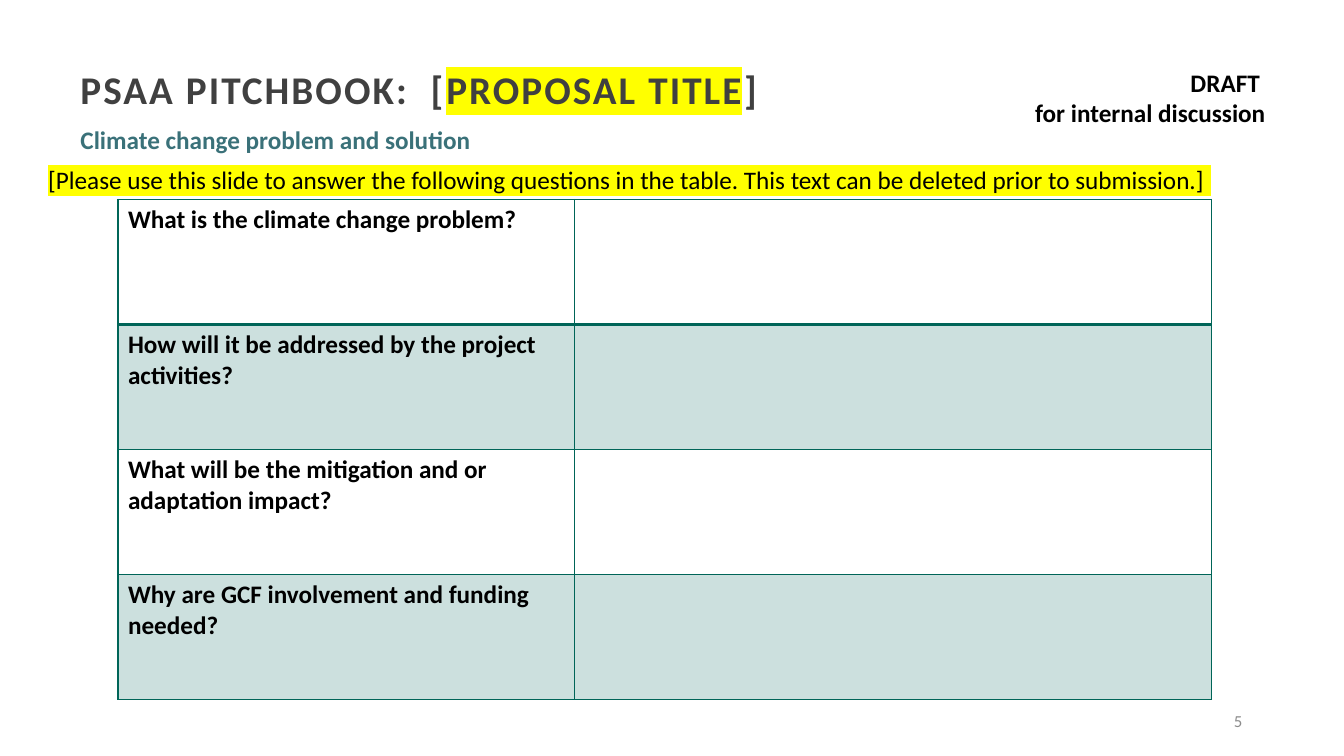
from lxml import etree
from pptx import Presentation
from pptx.dml.color import RGBColor
from pptx.enum import shapes, text
from pptx.oxml import ns
from pptx.util import Inches, Pt

BLACK = RGBColor(0x00, 0x00, 0x00)
WHITE = RGBColor(0xFF, 0xFF, 0xFF)
DARK_GREY = RGBColor(0x40, 0x40, 0x40)
GREY = RGBColor(0x8C, 0x8C, 0x8C)
TEAL = RGBColor(0x3A, 0x71, 0x79)
GREEN = RGBColor(0x00, 0x65, 0x58)
PALE_GREEN = RGBColor(0xCC, 0xE0, 0xDE)
YELLOW = RGBColor(0xFF, 0xFF, 0x00)

# A paragraph is a list of (text, highlight) runs.
DRAFT_NOTE = [[("DRAFT ", None)], [("for internal discussion", None)]]
TITLE = [[("PSAA PITCHBOOK:  [", None), ("PROPOSAL TITLE", YELLOW), ("]", None)]]
SUBTITLE = [[("Climate change problem and solution", None)]]
INSTRUCTION = [[("[Please use this slide to answer the following questions in the table. "
                 "This text can be deleted prior to submission.] ", YELLOW)]]
PAGE_NUMBER = [[("5", None)]]
QUESTIONS = [
    "What is the climate change problem?",
    "How will it be addressed by the project activities?",
    "What will be the mitigation and or adaptation impact?",
    "Why are GCF involvement and funding needed?",
]
TABLE_LEFT, TABLE_TOP = 1.17, 1.98
COLUMN_WIDTHS = [4.53, 6.32]
ROW_HEIGHT = 1.24


def add_color(parent, tag, color):
    element = etree.SubElement(parent, ns.qn(tag))
    etree.SubElement(element, ns.qn("a:srgbClr"), val=str(color))
    return element


def write(frame, paragraphs, size=18, color=BLACK, bold=False, spacing=None,
          align=text.PP_ALIGN.LEFT, anchor=text.MSO_ANCHOR.TOP, line_spacing=None):
    frame.word_wrap = True
    frame.vertical_anchor = anchor
    for index, runs in enumerate(paragraphs):
        paragraph = frame.add_paragraph() if index else frame.paragraphs[0]
        paragraph.alignment = align
        paragraph.line_spacing = line_spacing
        for content, highlight in runs:
            run = paragraph.add_run()
            run.text = content
            font = run.font
            font.size, font.bold = Pt(size), bold
            font.color.rgb = color
            properties = run._r.get_or_add_rPr()
            if spacing:
                properties.set("spc", str(round(spacing * 100)))
            if highlight:
                add_color(properties, "a:highlight", highlight)
            font.name = "Calibri"


def add_text(slide, box, paragraphs, **style):
    shape = slide.shapes.add_textbox(*map(Inches, box))
    write(shape.text_frame, paragraphs, **style)


def set_borders(cell, widths):
    """Draw the cell's borders; widths maps a side (L, R, T, B) to points."""
    properties = cell._tc.get_or_add_tcPr()
    for index, (side, width) in enumerate(widths.items()):
        line = etree.Element(ns.qn(f"a:ln{side}"), w=str(Pt(width)))
        add_color(line, "a:solidFill", GREEN)
        properties.insert(index, line)


def add_question_table(slide):
    rows, columns = len(QUESTIONS), len(COLUMN_WIDTHS)
    box = (TABLE_LEFT, TABLE_TOP, sum(COLUMN_WIDTHS), rows * ROW_HEIGHT)
    table = slide.shapes.add_table(rows, columns, *map(Inches, box)).table
    for column, width in zip(table.columns, COLUMN_WIDTHS):
        column.width = Inches(width)
    for row_index, question in enumerate(QUESTIONS):
        table.rows[row_index].height = Inches(ROW_HEIGHT)
        top = 2 if row_index == 1 else 1
        bottom = 2 if row_index == 0 else 1
        for cell in table.rows[row_index].cells:
            cell.fill.solid()
            cell.fill.fore_color.rgb = PALE_GREEN if row_index % 2 else WHITE
            set_borders(cell, {"L": 1, "R": 1, "T": top, "B": bottom})
        write(table.cell(row_index, 0).text_frame, [[(question, None)]], bold=True)


def add_subtitle(slide):
    shape = slide.shapes.add_shape(
        shapes.MSO_SHAPE.RECTANGLE, *map(Inches, (0.7, 1.18, 5.97, 0.4)))
    shape.shadow.inherit = False
    shape.fill.solid()
    shape.fill.fore_color.rgb = WHITE
    shape.line.fill.background()
    write(shape.text_frame, SUBTITLE, color=TEAL, bold=True)


def main():
    presentation = Presentation()
    presentation.slide_width, presentation.slide_height = Inches(13.33), Inches(7.5)
    slide = presentation.slides.add_slide(presentation.slide_layouts[6])
    add_text(slide, (5.83, 0.62, 6.82, 0.71), DRAFT_NOTE, bold=True,
             align=text.PP_ALIGN.RIGHT)
    add_text(slide, (9.42, 6.95, 3, 0.4), PAGE_NUMBER, size=12, color=GREY,
             align=text.PP_ALIGN.RIGHT, anchor=text.MSO_ANCHOR.MIDDLE)
    add_text(slide, (0.7, 0.65, 10.1, 0.61), TITLE, size=28, color=DARK_GREY,
             bold=True, spacing=1.5, line_spacing=0.9)
    add_text(slide, (0.38, 1.58, 12.57, 0.4), INSTRUCTION)
    add_question_table(slide)
    add_subtitle(slide)
    presentation.save("out.pptx")


if __name__ == "__main__":
    main()
